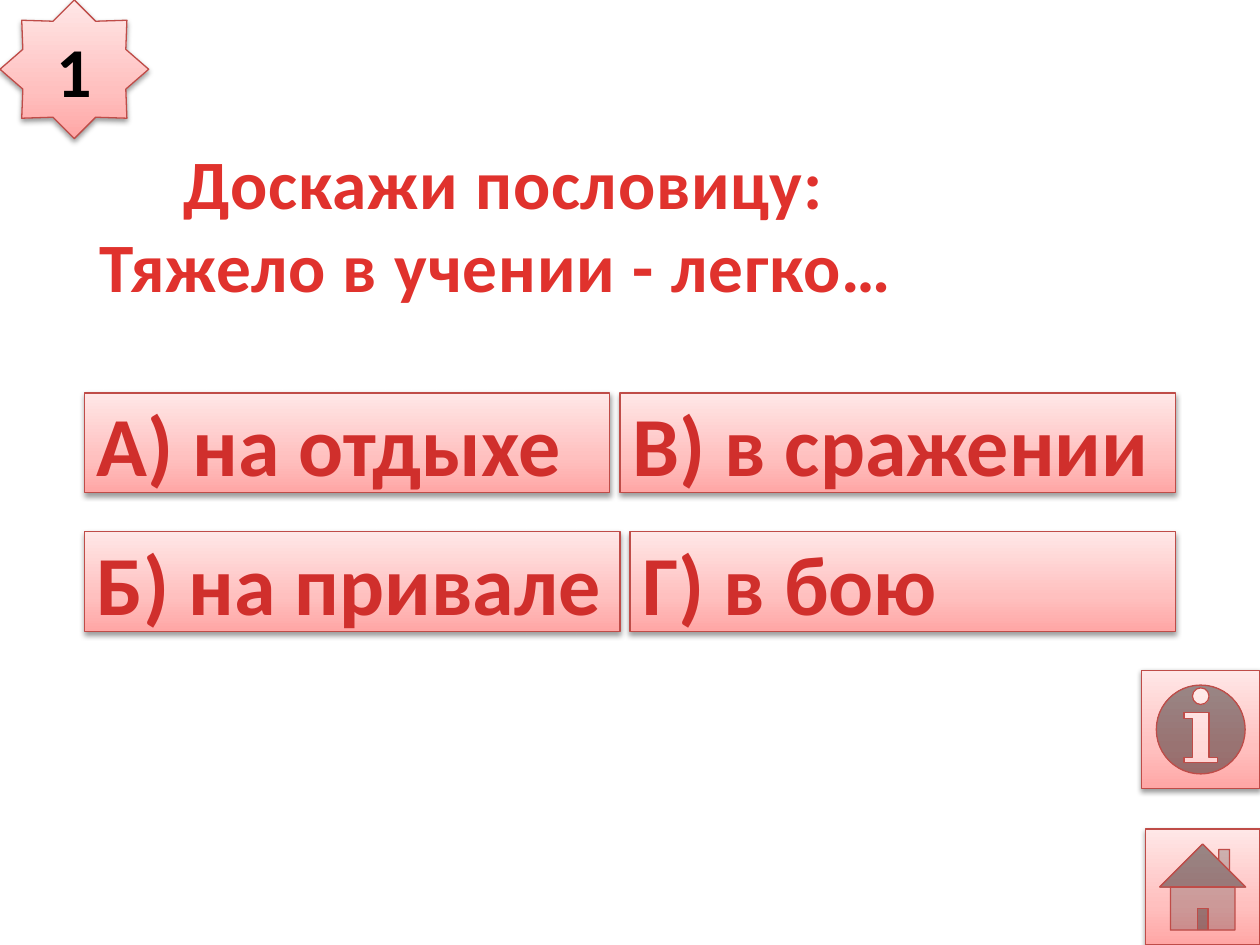
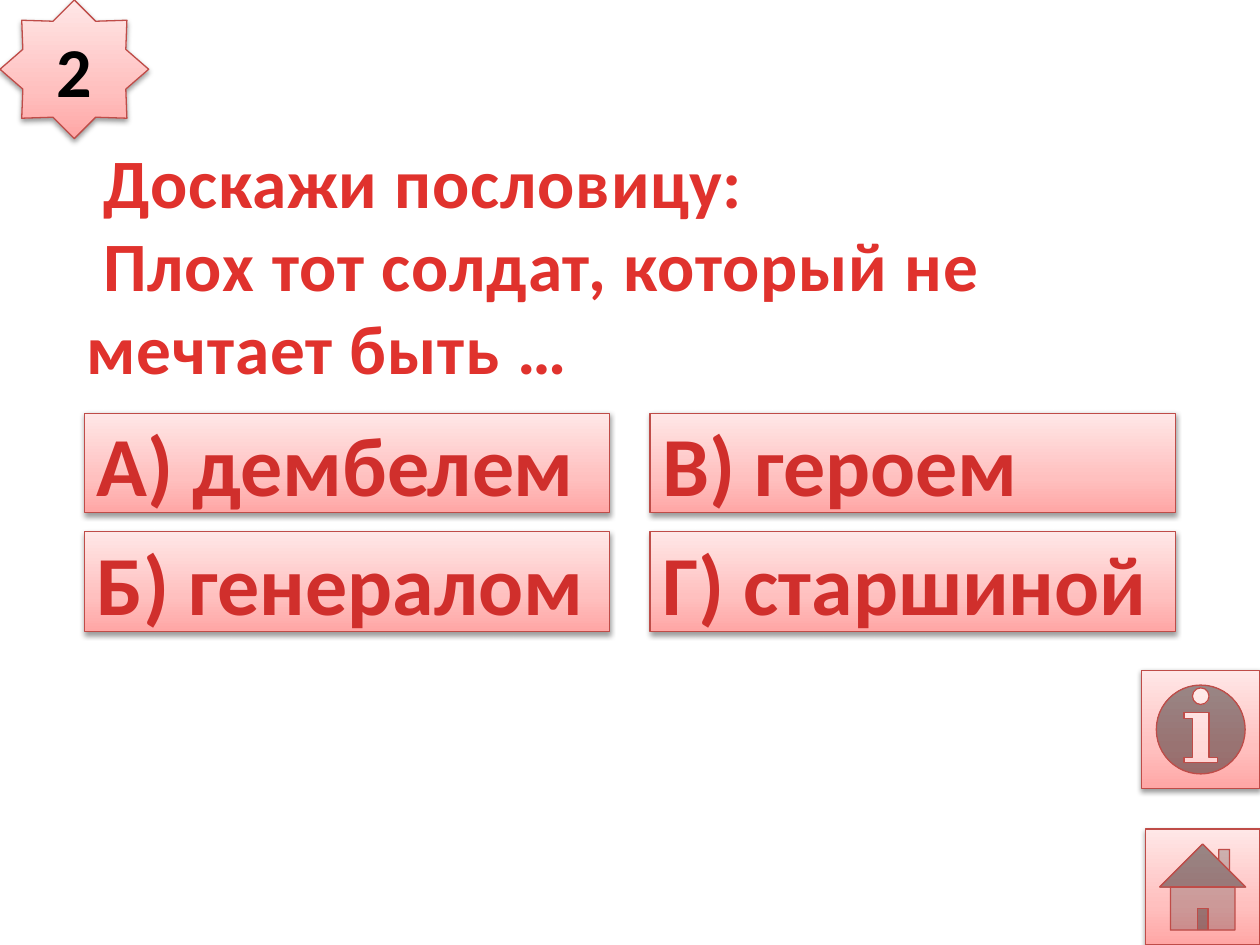
"""Build two quiz slides where a proverb is completed from four answers."""
from lxml.etree import SubElement
from pptx import Presentation
from pptx.dml.color import RGBColor
from pptx.enum.shapes import MSO_SHAPE
from pptx.enum.text import MSO_ANCHOR, PP_ALIGN
from pptx.oxml.ns import qn
from pptx.util import Inches, Pt

QUESTIONS = [
    {
        "number": "1",
        "title": " Доскажи пословицу:\vТяжело в учении - легко…",
        "title_box": (0.59, 1.15, 6.69, 1.25),
        "title_align": PP_ALIGN.CENTER,
        "answers": ["А) на отдыхе", "Б) на привале", "В) в сражении", "Г) в бою"],
        "row_tops": (3.12, 4.22),
        "left_widths": (4.17, 4.25),
        "gap": 0.08,
    },
    {
        "number": "2",
        "title": " Доскажи пословицу:\v Плох тот солдат, который не мечтает быть …",
        "title_box": (0.59, 1.47, 8.66, 1.25),
        "title_align": PP_ALIGN.LEFT,
        "answers": ["А) дембелем", "Б) генералом", "В) героем", "Г) старшиной"],
        "row_tops": (3.28, 4.22),
        "left_widths": (4.17, 4.17),
        "gap": 0.32,
    },
]
WIDTH, HEIGHT = 10, 7.5
MARGIN, ANSWER_HEIGHT = 0.67, 0.79
STAR_BOX = (0, 0, 1.18, 1.1)
BUTTONS = [
    (MSO_SHAPE.ACTION_BUTTON_HOME, (9.09, 6.58, 0.91, 0.92)),
    (MSO_SHAPE.ACTION_BUTTON_INFORMATION, (9.06, 5.32, 0.94, 0.94)),
]
PANEL_STOPS = [(0, "FFA6A5"), (35, "FFC0BF"), (100, "FFE7E7")]
ANSWER_STOPS = [(0, "FC7C7A"), (75, "D02F2C"), (100, "C70500")]
TITLE_STOPS = [(25, "E0322D"), (100, "A2201C")]
OUTLINE, BLACK = "BF4C48", "000000"
UPWARD, DOWNWARD = 90, 270
ANSWER_FONT = {"name": "Calibri", "size": Pt(48), "bold": True}
NUMBER_FONT = {"name": "Calibri", "size": Pt(40), "bold": True}
TITLE_FONT = {"name": "Calibri", "size": Pt(39.6), "bold": True}
SHADOW = {"blurRad": Pt(3.1), "dist": Pt(1.6), "dir": 90 * 60000, "rotWithShape": 0}


def color(value):
    return RGBColor.from_string(value)


def inches(box):
    return [Inches(length) for length in box]


def add_color(parent, value):
    return SubElement(parent, qn("a:srgbClr"), val=value)


def paint_gradient(fill, properties, stops, angle):
    fill.gradient()
    fill.gradient_angle = angle
    stop_list = properties.find(qn("a:gradFill")).find(qn("a:gsLst"))
    for stop in list(stop_list):
        stop_list.remove(stop)
    for position, value in stops:
        add_color(SubElement(stop_list, qn("a:gs"), pos=str(position * 1000)), value)


def add_panel(slide, kind, box):
    shape = slide.shapes.add_shape(kind, *inches(box))
    properties = shape._element.spPr
    paint_gradient(shape.fill, properties, PANEL_STOPS, UPWARD)
    shape.line.color.rgb = color(OUTLINE)
    shape.line.width = Pt(0.75)
    shape.shadow.inherit = False
    attributes = {name: str(value) for name, value in SHADOW.items()}
    shadow = SubElement(properties.find(qn("a:effectLst")), qn("a:outerShdw"), attributes)
    SubElement(add_color(shadow, BLACK), qn("a:alpha"), val="38000")
    return shape


def write_text(shape, text, font_format, align, stops=None, spacing=0):
    frame = shape.text_frame
    frame.word_wrap = True
    frame.vertical_anchor = MSO_ANCHOR.MIDDLE
    frame.text = text
    paragraph = frame.paragraphs[0]
    paragraph.alignment = align
    for run in paragraph.runs:
        for name, value in font_format.items():
            setattr(run.font, name, value)
        properties = run._r.get_or_add_rPr()
        if spacing:
            properties.set("spc", str(spacing))
        if stops:
            paint_gradient(run.font.fill, properties, stops, DOWNWARD)
        else:
            run.font.color.rgb = color(BLACK)


def add_answers(slide, question):
    for index, answer in enumerate(question["answers"]):
        column, row = divmod(index, 2)
        left, width = MARGIN, question["left_widths"][row]
        if column:
            left += width + question["gap"]
            width = WIDTH - MARGIN - left
        box = (left, question["row_tops"][row], width, ANSWER_HEIGHT)
        shape = add_panel(slide, MSO_SHAPE.RECTANGLE, box)
        write_text(shape, answer, ANSWER_FONT, PP_ALIGN.LEFT, ANSWER_STOPS)


def add_question(presentation, question):
    slide = presentation.slides.add_slide(presentation.slide_layouts[6])
    add_answers(slide, question)
    for kind, box in BUTTONS:
        add_panel(slide, kind, box)
    star = add_panel(slide, MSO_SHAPE.STAR_8_POINT, STAR_BOX)
    write_text(star, question["number"], NUMBER_FONT, PP_ALIGN.CENTER)
    title = slide.shapes.add_textbox(*inches(question["title_box"]))
    write_text(title, question["title"], TITLE_FONT, question["title_align"], TITLE_STOPS, 50)


def main():
    presentation = Presentation()
    presentation.slide_width = Inches(WIDTH)
    presentation.slide_height = Inches(HEIGHT)
    for question in QUESTIONS:
        add_question(presentation, question)
    presentation.save("out.pptx")


if __name__ == "__main__":
    main()
